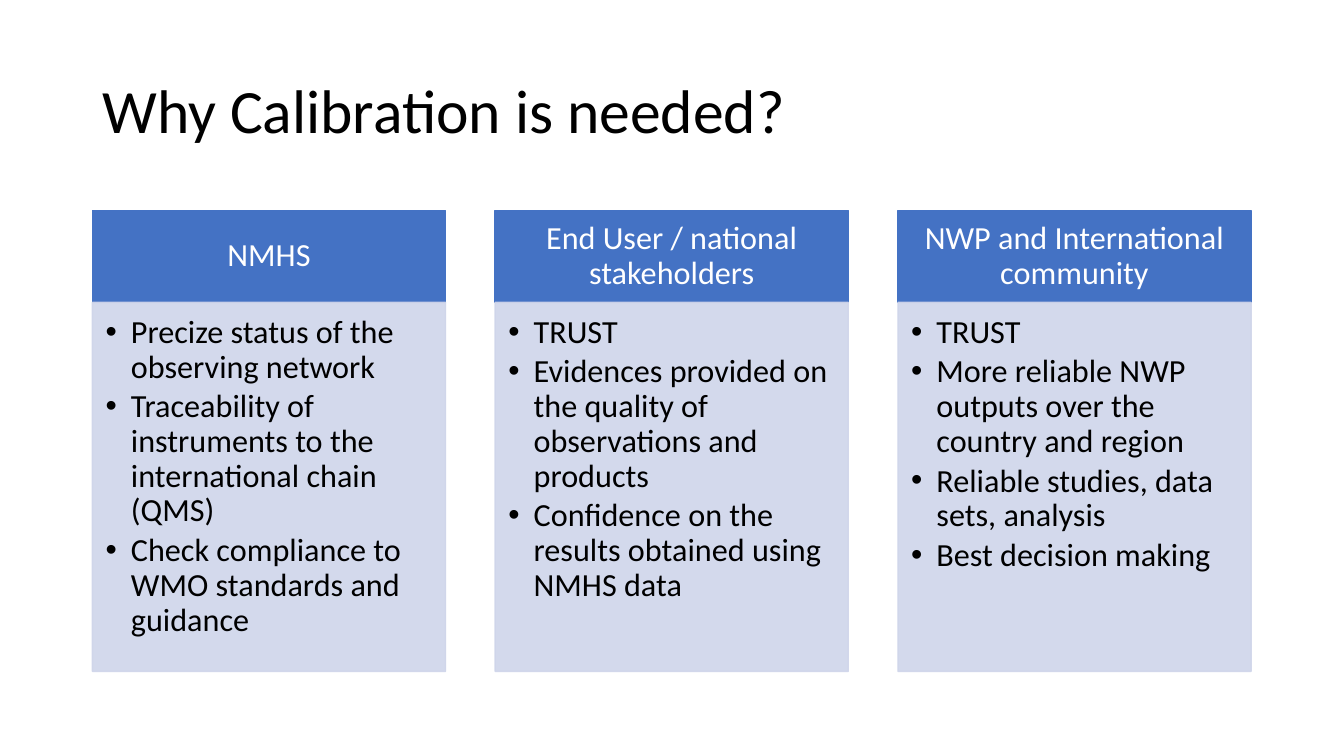
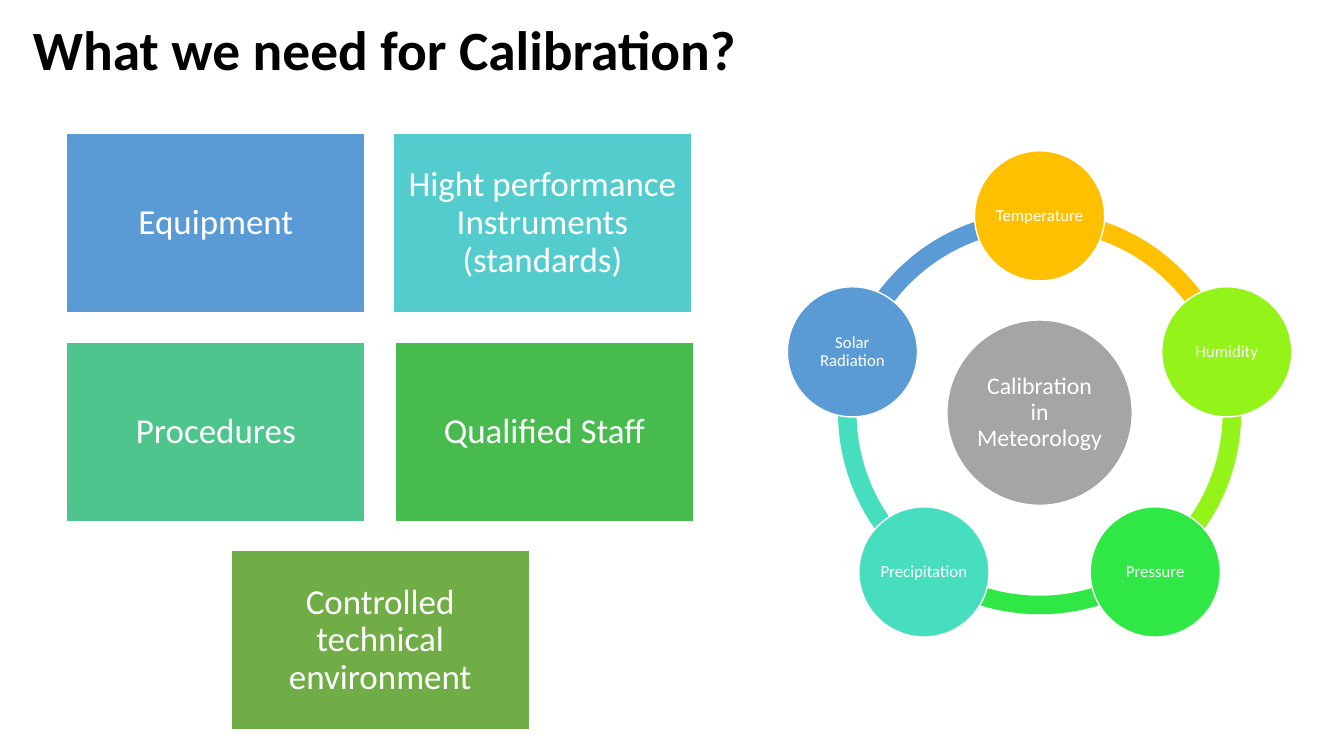
from math import cos, radians, sin

from lxml import etree
from pptx import Presentation
from pptx.dml.color import RGBColor
from pptx.enum.shapes import MSO_SHAPE
from pptx.enum.text import MSO_ANCHOR, PP_ALIGN
from pptx.oxml.ns import qn
from pptx.util import Cm, Pt

RECTANGLE = MSO_SHAPE.RECTANGLE
CIRCLE = MSO_SHAPE.OVAL
ARC = MSO_SHAPE.BLOCK_ARC
TOP, MIDDLE = MSO_ANCHOR.TOP, MSO_ANCHOR.MIDDLE
LEFT, CENTER = PP_ALIGN.LEFT, PP_ALIGN.CENTER

FONT = "Calibri"
COLORS = {
    "black": "000000",
    "white": "FFFFFF",
    "header": "4472C4",
    "body": "CFD5EA",
    "blue": "5B9BD5",
    "cyan": "54CCCD",
    "sea": "4DC58D",
    "green": "48BB4F",
    "olive": "70AD47",
    "gray": "A5A5A5",
    "amber": "FFC000",
    "lime": "94F319",
    "bright": "30E845",
    "turquoise": "46DEBF",
}


def write(frame, text, size, color, anchor=MIDDLE, align=CENTER,
          insets=(0.25, 0.13, 0.25, 0.13), bold=False):
    frame.text = text
    frame.word_wrap = True
    frame.vertical_anchor = anchor
    (frame.margin_left, frame.margin_top,
     frame.margin_right, frame.margin_bottom) = [Cm(inset) for inset in insets]
    for paragraph in frame.paragraphs:
        paragraph.alignment = align
        paragraph.line_spacing = 0.9
        for run in paragraph.runs:
            run.font.name = FONT
            run.font.size = Pt(size)
            run.font.bold = bold
            run.font.color.rgb = RGBColor.from_string(COLORS[color])


def add_block(slide, preset, box, fill, line=None):
    block = slide.shapes.add_shape(preset, *[Cm(length) for length in box])
    block.shadow.inherit = False
    block.fill.solid()
    block.fill.fore_color.rgb = RGBColor.from_string(COLORS[fill])
    if line:
        block.line.color.rgb = RGBColor.from_string(COLORS[line])
        block.line.width = Pt(1)
    else:
        block.line.fill.background()
    return block


deck = Presentation()
deck.slide_width, deck.slide_height = Cm(33.87), Cm(19.05)

titles = [
    ("Why Calibration is needed?", (2.33, 1.02, 29.21, 3.68), 44, False),
    ("What we need for Calibration?", (0.58, 0.43, 25.1, 1.78), 39.6, True),
]
slides = []
for title, box, size, bold in titles:
    slide = deck.slides.add_slide(deck.slide_layouts[6])
    heading = slide.shapes.add_textbox(*[Cm(length) for length in box])
    write(heading.text_frame, title, size, "black", align=LEFT, bold=bold)
    slides.append(slide)
reasons_slide, needs_slide = slides

beneficiaries = [
    ("NMHS", [
        "Precize status of the observing network",
        "Traceability of instruments to the international chain (QMS)",
        "Check compliance to WMO standards and guidance",
    ]),
    ("End User / national stakeholders", [
        "TRUST",
        "Evidences provided on the quality of observations and products",
        "Confidence on the results obtained using NMHS data",
    ]),
    ("NWP and International community", [
        "TRUST",
        "More reliable NWP outputs over the country and region",
        "Reliable studies, data sets, analysis",
        "Best decision making",
    ]),
]
for column, (beneficiary, reasons) in enumerate(beneficiaries):
    left = 2.33 + 10.15 * column
    header = add_block(reasons_slide, RECTANGLE, (left, 5.31, 8.9, 2.31), "header", "header")
    write(header.text_frame, beneficiary, 23, "white", insets=(0.46, 0.25, 0.46, 0.25))

    body = add_block(reasons_slide, RECTANGLE, (left, 7.62, 8.9, 9.3), "body", "body")
    for tint in body.element.spPr.iter(qn("a:srgbClr")):
        etree.SubElement(tint, qn("a:alpha"), val="90000")
    write(body.text_frame, "\n".join(reasons), 23, "black", TOP, LEFT,
          (0.33, 0.33, 0.46, 0.5))
    for paragraph in body.text_frame.paragraphs:
        paragraph.space_after = Pt(3.5)
        properties = paragraph._p.get_or_add_pPr()
        properties.set("marL", str(Cm(0.64)))
        properties.set("indent", str(-Cm(0.64)))
        etree.SubElement(properties, qn("a:buFont"), typeface="Arial")
        etree.SubElement(properties, qn("a:buChar"), char="•")

needs = [
    ("Equipment", 1.68, 0, "blue"),
    ("Hight performance Instruments (standards)", 9.91, 0, "cyan"),
    ("Procedures", 1.68, 1, "sea"),
    ("Qualified Staff", 9.96, 1, "green"),
    ("Controlled technical environment", 5.82, 2, "olive"),
]
for need, left, row, fill in needs:
    card = add_block(needs_slide, RECTANGLE, (left, 3.36 + 5.26 * row, 7.52, 4.52), fill, "white")
    write(card.text_frame, need, 25, "white", insets=[0.25] * 4)

quantities = [
    ("Temperature", "amber"),
    ("Humidity", "lime"),
    ("Pressure", "bright"),
    ("Precipitation", "turquoise"),
    ("Solar Radiation", "blue"),
]
center_x, center_y = 26.2, 10.4
ring_size, orbit = 10.16, 4.96
step = 360 / len(quantities)
ring_box = (center_x - ring_size / 2, center_y - ring_size / 2, ring_size, ring_size)
for index, (quantity, fill) in reversed(list(enumerate(quantities))):
    start = (270 + step * index) % 360
    arc = add_block(needs_slide, ARC, ring_box, fill)
    arc.adjustments[0] = start * 0.6
    arc.adjustments[1] = (start + step) % 360 * 0.6
    arc.adjustments[2] = 0.046

circles = [("Calibration in Meteorology", "gray", 0, 0, 4.67, 17, 0.06)]
for index, (quantity, fill) in enumerate(quantities):
    angle = radians(270 + step * index)
    circles.append((quantity, fill, orbit * cos(angle), orbit * sin(angle), 3.28, 12, 0.04))
for label, fill, offset_x, offset_y, diameter, size, inset in circles:
    box = (center_x + offset_x - diameter / 2, center_y + offset_y - diameter / 2,
           diameter, diameter)
    circle = add_block(needs_slide, CIRCLE, box, fill, "white")
    write(circle.text_frame, label, size, "white", insets=[inset] * 4)

deck.save("out.pptx")
